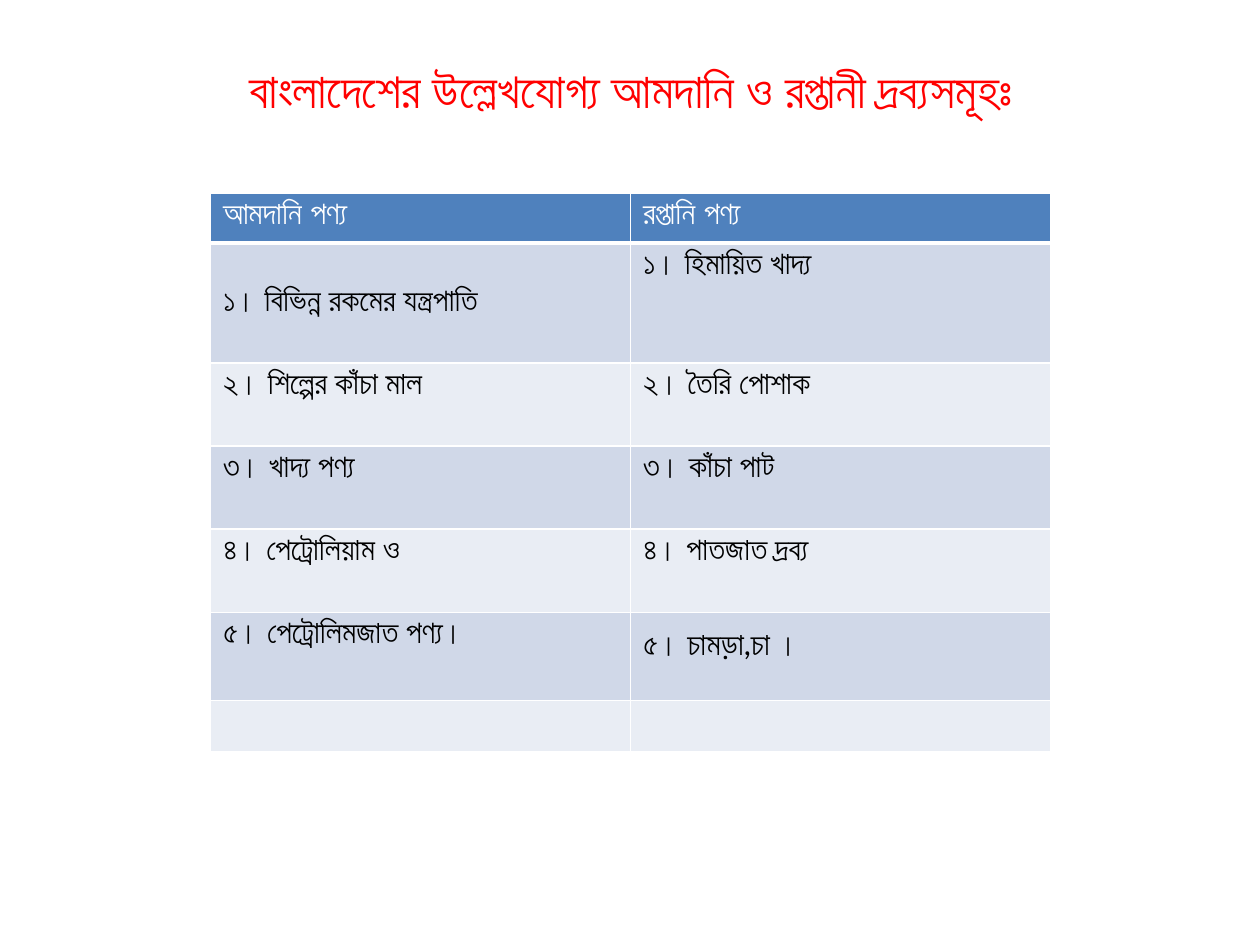
import pptx
import pptx.dml.color
import pptx.enum.text
import pptx.oxml
import pptx.oxml.ns
import pptx.util
from pptx.util import Inches

RGBColor = pptx.dml.color.RGBColor
WHITE = RGBColor(0xFF, 0xFF, 0xFF)
BLACK = RGBColor(0, 0, 0)
RED = RGBColor(0xFF, 0, 0)
HEADER_BLUE = RGBColor(0x4F, 0x81, 0xBD)
BAND_DARK = RGBColor(0xD0, 0xD8, 0xE8)
BAND_LIGHT = RGBColor(0xE9, 0xED, 0xF4)
FONT = "Lato"

TITLE = "বাংলাদেশের উল্লেখযোগ্য আমদানি ও রপ্তানী দ্রব্যসমূহঃ"
GOODS = [
    ("আমদানি পণ্য", "রপ্তানি পণ্য"),
    ("১। বিভিন্ন রকমের যন্ত্রপাতি", "১। হিমায়িত খাদ্য"),
    ("২। শিল্পের কাঁচা মাল", "২। তৈরি পোশাক"),
    ("৩। খাদ্য পণ্য", "৩। কাঁচা পাট"),
    ("৪। পেট্রোলিয়াম ও", "৪। পাতজাত দ্রব্য"),
    ("৫। পেট্রোলিমজাত পণ্য।", "৫। চামড়া,চা ।"),
    ("", ""),
]
ROW_HEIGHTS = [0.4, 0.95, 0.66, 0.66, 0.66, 0.7, 0.4]
# Cells whose text starts lower than the rest: (row, column) -> top margin
LOWERED = {(1, 0): 0.34, (5, 1): 0.1}


def add_run(paragraph, text, size, color, bold=False):
    run = paragraph.add_run()
    run.text = text
    run.font.name = FONT
    run.font.size = pptx.util.Pt(size)
    run.font.bold = bold
    run.font.color.rgb = color


def set_borders(cell, bottom_width):
    """White lines on all four sides of a cell."""
    properties = cell._tc.get_or_add_tcPr()
    for side, width in (("L", 1), ("R", 1), ("T", 1), ("B", bottom_width)):
        properties.append(pptx.oxml.parse_xml(
            f'<a:ln{side} {pptx.oxml.ns.nsdecls("a")} w="{pptx.util.Pt(width)}">'
            f'<a:solidFill><a:srgbClr val="{WHITE}"/></a:solidFill></a:ln{side}>'))


def place_title(slide, left, top, width, height):
    title = slide.shapes.title
    title.left, title.top, title.width, title.height = left, top, width, height
    frame = title.text_frame
    frame.word_wrap = True
    frame.vertical_anchor = pptx.enum.text.MSO_ANCHOR.TOP
    heading = frame.paragraphs[0]
    heading.alignment = pptx.enum.text.PP_ALIGN.CENTER
    add_run(heading, TITLE, 28, RED)


def place_goods_table(slide, left, top, width):
    height = Inches(sum(ROW_HEIGHTS))
    goods_table = slide.shapes.add_table(
        len(GOODS), len(GOODS[0]), left, top, width, height).table
    for r, (entries, row_height) in enumerate(zip(GOODS, ROW_HEIGHTS)):
        goods_table.rows[r].height = Inches(row_height)
        is_header = r == 0
        band = HEADER_BLUE if is_header else BAND_DARK if r % 2 else BAND_LIGHT
        for c, entry in enumerate(entries):
            cell = goods_table.cell(r, c)
            set_borders(cell, 3 if is_header else 1)
            cell.fill.solid()
            cell.fill.fore_color.rgb = band
            cell.margin_top = Inches(LOWERED.get((r, c), 0.05))
            if entry:
                add_run(cell.text_frame.paragraphs[0], entry, 18,
                        WHITE if is_header else BLACK, bold=is_header)


def main():
    deck = pptx.Presentation()
    deck.slide_width, deck.slide_height = Inches(10), Inches(7.5)
    slide = deck.slides.add_slide(deck.slide_layouts[5])  # title only
    # Heading
    place_title(slide, Inches(0.67), Inches(0.42), Inches(8.67), Inches(0.57))
    # Imports and exports
    place_goods_table(slide, Inches(1.67), Inches(1.53), Inches(6.67))
    deck.save("out.pptx")


if __name__ == "__main__":
    main()
